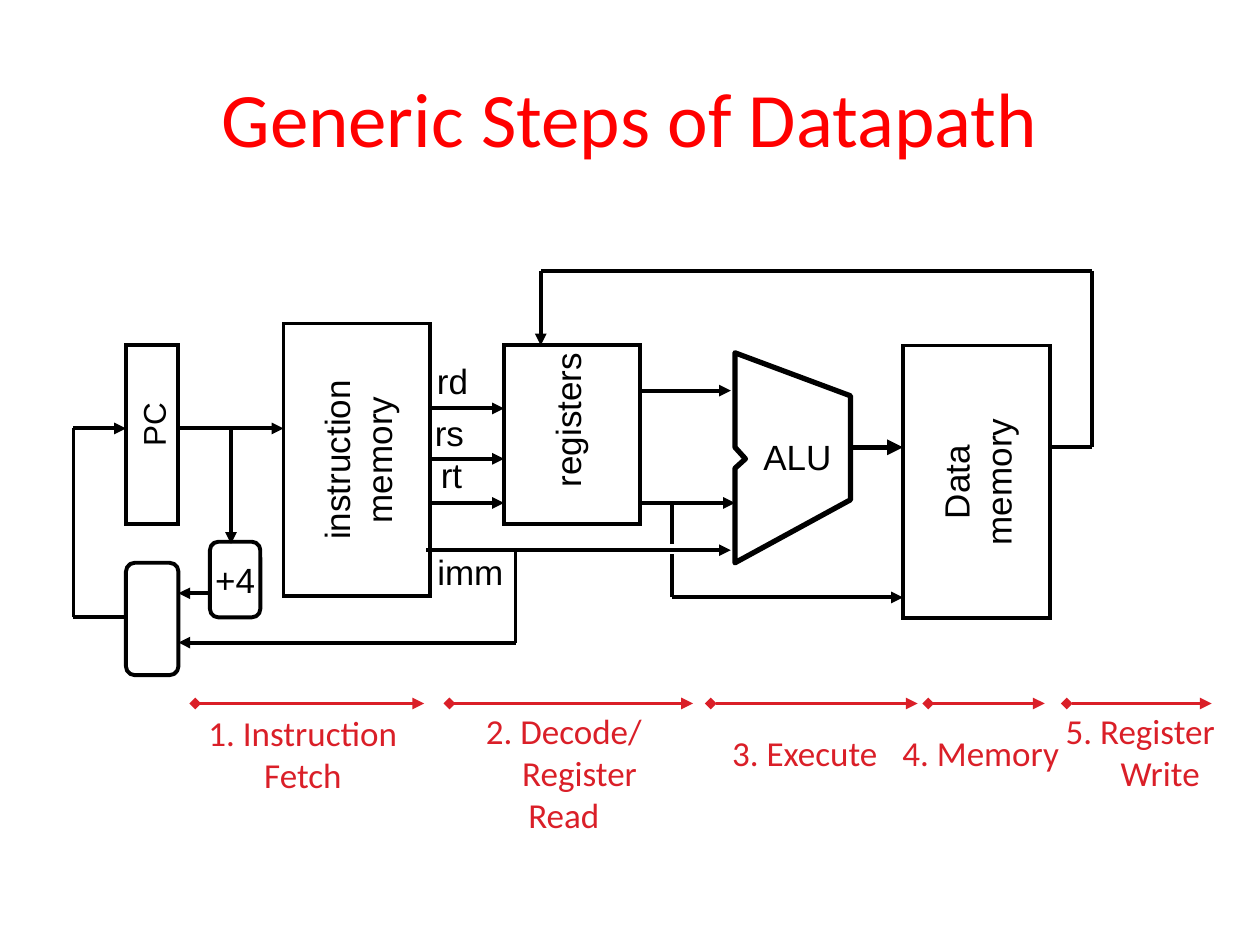
import pptx
import pptx.util
import pptx.dml.color
import pptx.enum.shapes
import pptx.enum.text
import lxml.etree

COLS, ROWS = 120, 90
BLACK, RED, STEP_RED = "000000", "FF0000", "DA1F28"
NS = "{http://schemas.openxmlformats.org/drawingml/2006/main}"
SHAPE = pptx.enum.shapes.MSO_SHAPE
rgb = pptx.dml.color.RGBColor.from_string

prs = pptx.Presentation()
prs.slide_width = pptx.util.Inches(10)
prs.slide_height = pptx.util.Inches(7.5)
s = prs.slides.add_slide(prs.slide_layouts[6])
col, row = prs.slide_width / COLS, prs.slide_height / ROWS


def write(sp, lines, size=20, font="Arial", color=BLACK, indents=()):
    tf = sp.text_frame
    frame = {"word_wrap": True, "vertical_anchor": pptx.enum.text.MSO_ANCHOR.MIDDLE,
             "margin_left": 0, "margin_right": 0, "margin_top": 0, "margin_bottom": 0}
    for name, value in frame.items():
        setattr(tf, name, value)
    for i, text in enumerate(lines):
        p = tf.paragraphs[0] if i == 0 else tf.add_paragraph()
        p.alignment = pptx.enum.text.PP_ALIGN.CENTER
        if i < len(indents):
            p._p.get_or_add_pPr().set("marL", str(int(indents[i] * col)))
        r = p.add_run()
        r.text = text
        for name, value in {"size": pptx.util.Pt(size), "name": font}.items():
            setattr(r.font, name, value)
        r.font.color.rgb = rgb(color)


def connect(x1, y1, x2, y2, color=BLACK, width=2.25, head=None, tail=None):
    sp = s.shapes.add_connector(pptx.enum.shapes.MSO_CONNECTOR.STRAIGHT,
                                int(x1 * col), int(y1 * row), int(x2 * col), int(y2 * row))
    sp.line.color.rgb = rgb(color)
    sp.line.width = pptx.util.Pt(width)
    ln = sp.line._get_or_add_ln()
    for tag, end in (("headEnd", head), ("tailEnd", tail)):
        if end:
            lxml.etree.SubElement(ln, NS + tag, type=end)
    lxml.etree.SubElement(sp._element.spPr, NS + "effectLst")


blocks = [
    (SHAPE.RECTANGLE, 12, 32.9, 5, 17, 0, []),
    (SHAPE.RECTANGLE, 21, 36.8, 26, 14, 270, ["instruction", "memory"]),
    (SHAPE.RECTANGLE, 48, 32.9, 13, 17, 0, []),
    (SHAPE.RECTANGLE, 80, 38.9, 26, 14, 270, ["Data", "memory"]),
    (SHAPE.ROUNDED_RECTANGLE, 20, 51.6, 4.8, 7.2, 0, ["+4"]),
    (SHAPE.ROUNDED_RECTANGLE, 12, 53.6, 5, 10.7, 0, []),
]
for kind, x, y, w, h, turn, lines in blocks:
    sp = s.shapes.add_shape(kind, int(x * col), int(y * row), int(w * col), int(h * row))
    sp.rotation = turn
    sp.shadow.inherit = False
    sp.fill.solid()
    sp.fill.fore_color.rgb = rgb("FFFFFF")
    sp.line.color.rgb = rgb(BLACK)
    sp.line.width = pptx.util.Pt(2.25)
    if kind == SHAPE.RECTANGLE:
        lxml.etree.SubElement(sp.line._get_or_add_ln(), NS + "miter", lim="800000")
    write(sp, lines)

alu = [(70, 33.6), (81, 37.7), (81, 47.6), (70, 53.6), (70, 44.6), (71, 43.7), (70, 42.6)]
points = [(int(x * col), int(y * row)) for x, y in alu]
builder = s.shapes.build_freeform(*points[0], scale=1.0)
builder.add_line_segments(points[1:], close=True)
sp = builder.convert_to_shape()
sp.shadow.inherit = False
sp.fill.background()
sp.line.color.rgb = rgb(BLACK)
sp.line.width = pptx.util.Pt(3)

wires = [
    [(17, 40.8), (27, 40.8)],
    [(22, 40.8), (22, 51.8)],
    [(20, 56.5), (17, 56.5)],
    [(12, 58.8), (7, 58.8), (7, 40.8), (12, 40.8)],
    [(41, 38.9), (48, 38.9)],
    [(41, 43.7), (48, 43.7)],
    [(41, 47.9), (48, 47.9)],
    [(40.6, 52.4), (69.6, 52.4)],
    [(49.1, 52.4), (49.1, 61.2), (17, 61.2)],
    [(61, 37.2), (69.6, 37.2)],
    [(61, 47.9), (70, 47.9)],
    [(64, 52.8), (64, 56.9), (86, 56.9)],
    [(100, 42.6), (104, 42.6), (104, 25.8), (51.5, 25.8), (51.5, 32.9)],
]
for wire in wires:
    for start, end in zip(wire, wire[1:]):
        connect(*start, *end, tail="triangle" if end == wire[-1] else None)
connect(64, 47.9, 64, 51.8)
connect(81, 42.6, 86, 42.6, width=3, tail="triangle")

steps = [
    (18.6, 40.4, 18.6, 67.2, 20.5, 9.2, ["1. Instruction", "Fetch"], ()),
    (42.8, 66, 45, 66.9, 17.4, 13.4, ["2. Decode/", "Register", "Read"], (0, 3)),
    (67.7, 87.4, 68.5, 69, 16.3, 5.3, ["3. Execute"], ()),
    (88.4, 99.5, 84.7, 69, 17.4, 5.3, ["4. Memory"], ()),
    (101.6, 115.4, 100.2, 67, 16.8, 9.2, ["5. Register", "Write"], (0, 3.8)),
]
labels = [
    (6, 3.6, 108, 15, 0, ["Generic Steps of Datapath"], 44, "Calibri", RED, ()),
    (11.3, 38, 6.6, 4.8, 270, ["PC"], 18, "Arial", BLACK, ()),
    (46.4, 37.4, 15.2, 5.2, 270, ["registers"], 20, "Arial", BLACK, ()),
    (71.5, 40.9, 8.9, 5.2, 0, ["ALU"], 20, "Arial", BLACK, ()),
]
for name, x, y, w in [("rd", 40.4, 33.6, 5.4), ("rs", 40.2, 38.6, 5.2),
                      ("rt", 40.8, 42.6, 4.4), ("imm", 40.4, 51.8, 8.8)]:
    labels.append((x, y, w, 5.2, 0, [name], 20, "Arial", BLACK, ()))
for start, end, x, y, w, h, lines, indents in steps:
    connect(start, 67, end, 67, STEP_RED, head="diamond", tail="triangle")
    labels.append((x, y, w, h, 0, lines, 20, "Calibri", STEP_RED, indents))

for x, y, w, h, turn, lines, size, font, color, indents in labels:
    sp = s.shapes.add_textbox(int(x * col), int(y * row), int(w * col), int(h * row))
    sp.rotation = turn
    write(sp, lines, size, font, color, indents)

prs.save("out.pptx")
